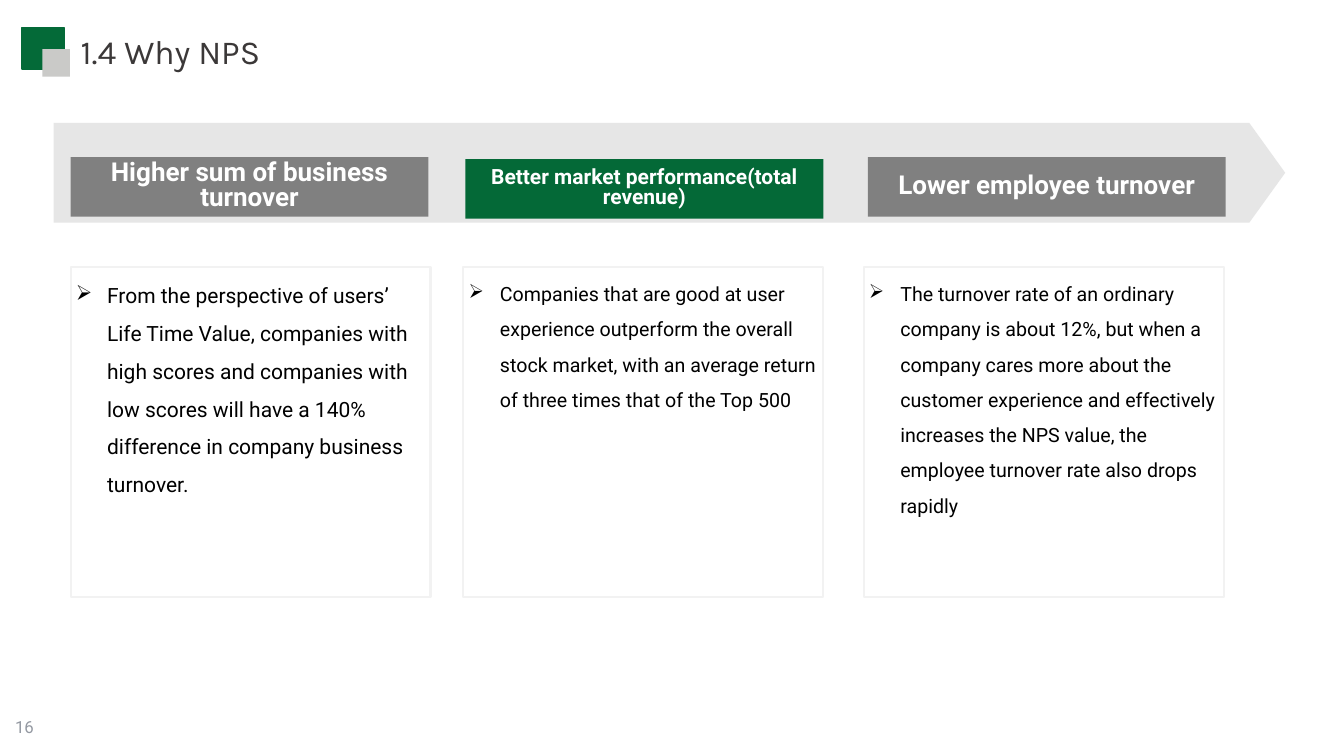
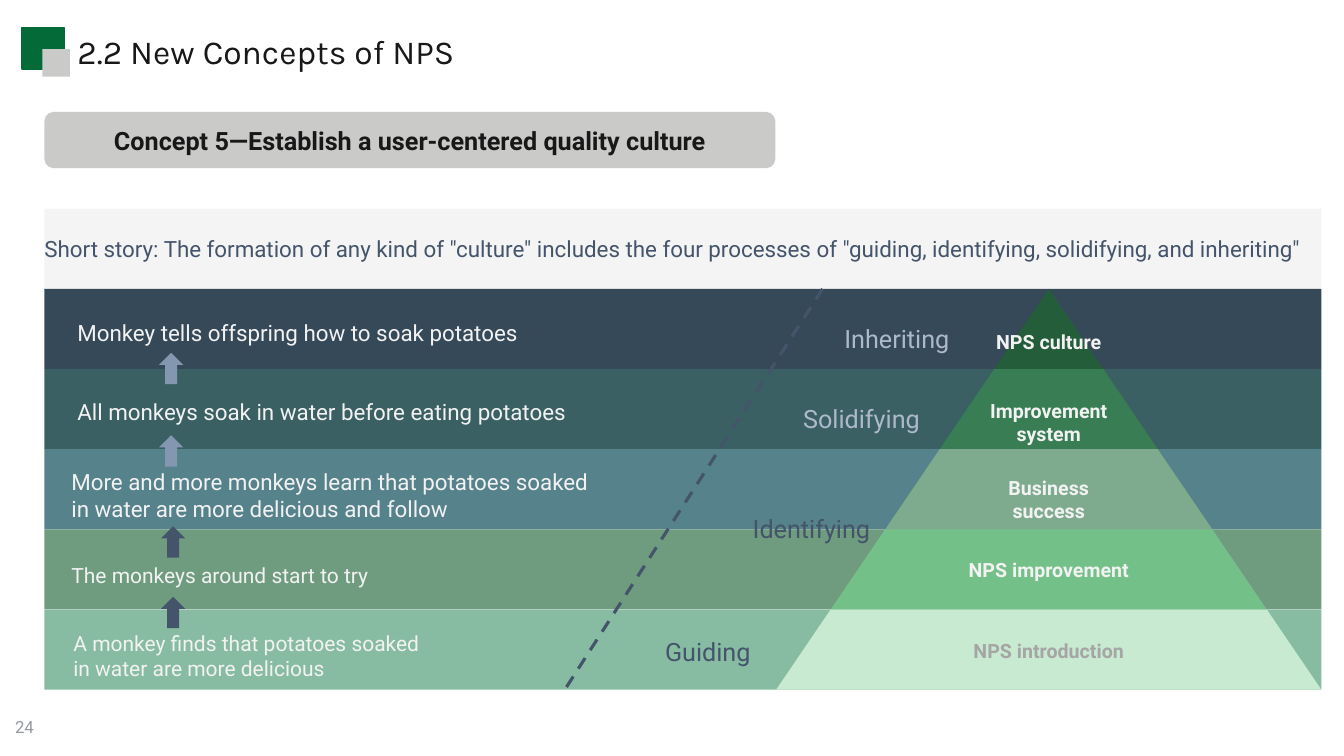
"""Build two slides on NPS: its benefits and the quality culture pyramid."""
from dataclasses import dataclass

from lxml import etree
from pptx import Presentation
from pptx.dml.color import RGBColor
from pptx.enum.dml import MSO_LINE
from pptx.enum.shapes import MSO_CONNECTOR, MSO_SHAPE
from pptx.enum.text import MSO_ANCHOR, MSO_AUTO_SIZE, PP_ALIGN
from pptx.oxml.ns import qn
from pptx.util import Cm, Pt

RECT, ROUND = MSO_SHAPE.RECTANGLE, MSO_SHAPE.ROUNDED_RECTANGLE
PENTAGON, UP_ARROW = MSO_SHAPE.PENTAGON, MSO_SHAPE.UP_ARROW
STRAIGHT, DASH = MSO_CONNECTOR.STRAIGHT, MSO_LINE.DASH
TOP, MIDDLE = MSO_ANCHOR.TOP, MSO_ANCHOR.MIDDLE
LEFT, CENTER = PP_ALIGN.LEFT, PP_ALIGN.CENTER
TITLE_ONLY = 5

COLORS = {
    "green": "046A38", "head_green": "046937", "logo_gray": "CACAC8",
    "title_gray": "3B3838", "ink": "181818", "black": "000000", "white": "FFFFFF",
    "page": "9499A2", "arrow_gray": "CCCCCC", "gray": "808080", "pale": "F2F2F2",
    "story": "DFDFDF", "slate": "44546B", "steel": "8497B0", "mist": "ADB9CB",
    "muted": "A5A5A5",
    "band1": "364958", "band2": "3A6063", "band3": "56828B",
    "band4": "6F9C7F", "band5": "87BCA2",
    "tier1": "245D3A", "tier2": "397D54", "tier3": "7EAB8E",
    "tier4": "73C088", "tier5": "C8EAD1",
}

CARD_W, CARD_TOP, CARD_H, HEAD_H = 9.07, 6.73, 8.31, 1.5
CARD_INSETS = (0.13, 0.08, 0.13, 0.08)
BAND_LEFT, BAND_W, BAND_H = 1.12, 32.18, 2.02
STORY_TOP = 5.26
BANDS_TOP = STORY_TOP + BAND_H
AXIS, HALF_BASE = 26.43, 6.87
LABEL_W = 6


@dataclass(frozen=True)
class Box:
    """Position and size in centimetres."""
    left: float
    top: float
    width: float
    height: float

    def emu(self) -> tuple:
        """Return the four lengths for python-pptx."""
        return Cm(self.left), Cm(self.top), Cm(self.width), Cm(self.height)


@dataclass(frozen=True)
class Text:
    """Paragraphs with one shared format."""
    lines: tuple
    size: float
    color: str
    bold: bool = False
    font: str = "Roboto"
    align: int = LEFT
    anchor: int = TOP
    spacing: float = 1.0
    bullet: str = ""
    insets: tuple = (0.25, 0.13, 0.25, 0.13)


@dataclass(frozen=True)
class Card:
    """Heading bar with a framed text below."""
    left: float
    head_left: float
    head_top: float
    head: str
    head_size: float
    fill: str
    body: str
    body_size: float


@dataclass(frozen=True)
class Level:
    """One band with its story text and pyramid tier."""
    left: float
    top: float
    story: tuple
    size: float
    label_top: float
    label: tuple
    label_color: str = "pale"


@dataclass(frozen=True)
class Mark:
    """Small coloured item at a point, with optional wording."""
    left: float
    top: float
    color: str
    text: str = ""


CARDS = (
    Card(1.78, 1.78, 3.96, "Higher sum of business turnover", 18.6, "gray",
         "From the perspective of users’ Life Time Value, companies with high scores and "
         "companies with low scores will have a 140% difference in company business "
         "turnover.", 15),
    Card(11.68, 11.73, 4.01, "Better market performance(total revenue)", 15, "head_green",
         "Companies that are good at user experience outperform the overall stock market, "
         "with an average return of three times that of the Top 500", 14),
    Card(21.77, 21.87, 3.96, "Lower employee turnover", 18.6, "gray",
         "The turnover rate of an ordinary company is about 12%, but when a company cares "
         "more about the customer experience and effectively increases the NPS value, the "
         "employee turnover rate also drops rapidly", 14),
)
LEVELS = (
    Level(1.7, 7.92, ("Monkey tells offspring how to soak potatoes",), 16,
          8.18, ("NPS culture",)),
    Level(1.7, 9.91, ("All monkeys soak in water before eating potatoes",), 16,
          9.91, ("Improvement", "system")),
    Level(1.55, 11.66, ("More and more monkeys learn that potatoes soaked",
                        "in water are more delicious and follow"), 16,
          11.86, ("Business", "success")),
    Level(1.55, 14.05, ("The monkeys around start to try",), 15,
          13.92, ("NPS improvement",)),
    Level(1.6, 15.75, ("A monkey finds that potatoes soaked",
                       "in water are more delicious"), 15,
          15.98, ("NPS introduction",), "muted"),
)
ARROWS = (Mark(4.01, 8.89, "steel"), Mark(4.01, 10.97, "steel"),
          Mark(4.06, 13.26, "slate"), Mark(4.06, 15.04, "slate"))
STAGES = (Mark(21.03, 8.03, "mist", "Inheriting"), Mark(19.99, 10.03, "mist", "Solidifying"),
          Mark(18.72, 12.8, "slate", "Identifying"), Mark(16.51, 15.9, "slate", "Guiding"))


def rgb(name: str) -> RGBColor:
    """Look up a colour."""
    return RGBColor.from_string(COLORS[name])


def set_attrs(obj, values: dict) -> None:
    """Set every attribute listed in a dict."""
    for name, value in values.items():
        setattr(obj, name, value)


def add_bullet(p, char: str) -> None:
    """Give a paragraph a hanging bullet."""
    pPr = p._p.get_or_add_pPr()
    pPr.set("marL", str(Cm(0.79)))
    pPr.set("indent", str(-Cm(0.79)))
    etree.SubElement(pPr, qn("a:buChar")).set("char", char)


def write(sp, text: Text) -> None:
    """Fill a shape with formatted text."""
    tf = sp.text_frame
    sides = ("margin_left", "margin_top", "margin_right", "margin_bottom")
    set_attrs(tf, {"word_wrap": True, "auto_size": MSO_AUTO_SIZE.NONE,
                   "vertical_anchor": text.anchor})
    set_attrs(tf, dict(zip(sides, map(Cm, text.insets))))
    for i, line in enumerate(text.lines):
        p = tf.add_paragraph() if i else tf.paragraphs[0]
        if text.bullet:
            add_bullet(p, text.bullet)
        set_attrs(p, {"alignment": text.align, "line_spacing": text.spacing})
        r = p.add_run()
        r.text = line
        set_attrs(r.font, {"name": text.font, "size": Pt(text.size), "bold": text.bold})
        r.font.color.rgb = rgb(text.color)


def paint(sp, fill: str = "", line: str = "", width: float = 1, alpha: int = 100) -> None:
    """Set fill, transparency and outline without shadow."""
    sp.shadow.inherit = False
    if fill:
        sp.fill.solid()
        sp.fill.fore_color.rgb = rgb(fill)
    else:
        sp.fill.background()
    if alpha < 100:
        clr = sp._element.spPr.find(qn("a:solidFill")).find(qn("a:srgbClr"))
        etree.SubElement(clr, qn("a:alpha")).set("val", str(alpha * 1000))
    if line:
        sp.line.color.rgb = rgb(line)
        sp.line.width = Pt(width)
    else:
        sp.line.fill.background()


def add_shape(s, kind: int, box: Box, text: Text | None = None, **style):
    """Draw a preset shape with optional text."""
    sp = s.shapes.add_shape(kind, *box.emu())
    paint(sp, **style)
    if text:
        write(sp, text)
    return sp


def add_text(s, box: Box, text: Text) -> None:
    """Draw a text box."""
    write(s.shapes.add_textbox(*box.emu()), text)


def add_slide(prs, title: str, left: float, top: float, color: str, number: int):
    """Start a slide with squares, title and page number."""
    s = prs.slides.add_slide(prs.slide_layouts[TITLE_ONLY])
    add_shape(s, RECT, Box(0.56, 0.69, 1.05, 1.05), fill="green", line="green")
    add_shape(s, RECT, Box(1.07, 1.24, 0.69, 0.69), fill="logo_gray")
    sp = s.shapes.title
    set_attrs(sp, dict(zip(("left", "top", "width", "height"),
                           Box(left, top, 26.26, 2.69).emu())))
    write(sp, Text((title,), 24, color, font="Karla"))
    add_text(s, Box(0.13, 17.81, 7.62, 1.02),
             Text((str(number),), 12, "page", anchor=MIDDLE))
    return s


def add_card(s, card: Card) -> None:
    """Draw one benefit card."""
    add_shape(s, RECT, Box(card.left, CARD_TOP, CARD_W, CARD_H),
              Text((card.body,), card.body_size, "black", spacing=1.5, bullet="➢",
                   insets=CARD_INSETS), line="pale", width=1.5)
    add_shape(s, RECT, Box(card.head_left, card.head_top, 9.02, HEAD_H),
              Text((card.head,), card.head_size, "white", bold=True, align=CENTER,
                   anchor=MIDDLE, spacing=0.8, insets=CARD_INSETS), fill=card.fill)


def add_tier(s, index: int) -> None:
    """Draw one slice of the pyramid."""
    upper, lower = (HALF_BASE * n / len(LEVELS) for n in (index, index + 1))
    top = BANDS_TOP + index * BAND_H
    bottom = top + BAND_H
    corners = [(AXIS - upper, top), (AXIS + upper, top),
               (AXIS + lower, bottom), (AXIS - lower, bottom)]
    start, *rest = [(Cm(x), Cm(y)) for x, y in corners]
    outline = s.shapes.build_freeform(*start)
    outline.add_line_segments(rest, close=True)
    paint(outline.convert_to_shape(), fill=f"tier{index + 1}")


def add_level(s, index: int, level: Level) -> None:
    """Draw one band with its story, tier and label."""
    add_shape(s, RECT, Box(BAND_LEFT, BANDS_TOP + index * BAND_H, BAND_W, BAND_H),
              fill=f"band{index + 1}")
    add_text(s, Box(level.left, level.top, 16, 1), Text(level.story, level.size, "pale"))
    add_tier(s, index)
    add_text(s, Box(AXIS - LABEL_W / 2, level.label_top, LABEL_W, 0.86),
             Text(level.label, 14, level.label_color, bold=True, align=CENTER))


def build_benefits(prs) -> None:
    """Build the slide of three benefits."""
    s = add_slide(prs, "1.4 Why NPS", 1.78, 0.66, "title_gray", 16)
    sp = add_shape(s, PENTAGON, Box(1.35, 3.1, 31.04, 2.51), fill="arrow_gray", alpha=48)
    sp.adjustments[0] = 0.36
    for card in CARDS:
        add_card(s, card)


def build_culture(prs) -> None:
    """Build the slide of the culture pyramid."""
    s = add_slide(prs, "2.2 New Concepts of NPS", 1.7, 0.64, "ink", 24)
    add_shape(s, ROUND, Box(BAND_LEFT, 2.82, 18.42, 1.42),
              Text(("Concept 5—Establish a user-centered quality culture",), 18, "ink",
                   bold=True, align=CENTER, anchor=MIDDLE), fill="logo_gray")
    add_shape(s, RECT, Box(BAND_LEFT, STORY_TOP, BAND_W, BAND_H),
              Text(('Short story: The formation of any kind of "culture" includes the four '
                    'processes of "guiding, identifying, solidifying, and inheriting"',),
                   16, "slate", anchor=MIDDLE, insets=(0, 0, 0, 0)), fill="story", alpha=33)
    for index, level in enumerate(LEVELS):
        add_level(s, index, level)
    for arrow in ARROWS:
        add_shape(s, UP_ARROW, Box(arrow.left, arrow.top, 0.61, 0.79), fill=arrow.color)
    for stage in STAGES:
        add_text(s, Box(stage.left, stage.top, 4.6, 1.02), Text((stage.text,), 18, stage.color))
    line = s.shapes.add_connector(STRAIGHT, Cm(20.73), Cm(BANDS_TOP), Cm(14.22), Cm(17.4))
    line.line.color.rgb = rgb("slate")
    set_attrs(line.line, {"width": Pt(2.25), "dash_style": DASH})
    etree.SubElement(line._element.spPr, qn("a:effectLst"))


def main() -> None:
    """Create and save the presentation."""
    prs = Presentation()
    set_attrs(prs, {"slide_width": Cm(33.87), "slide_height": Cm(19.05)})
    build_benefits(prs)
    build_culture(prs)
    prs.save("out.pptx")


if __name__ == "__main__":
    main()
